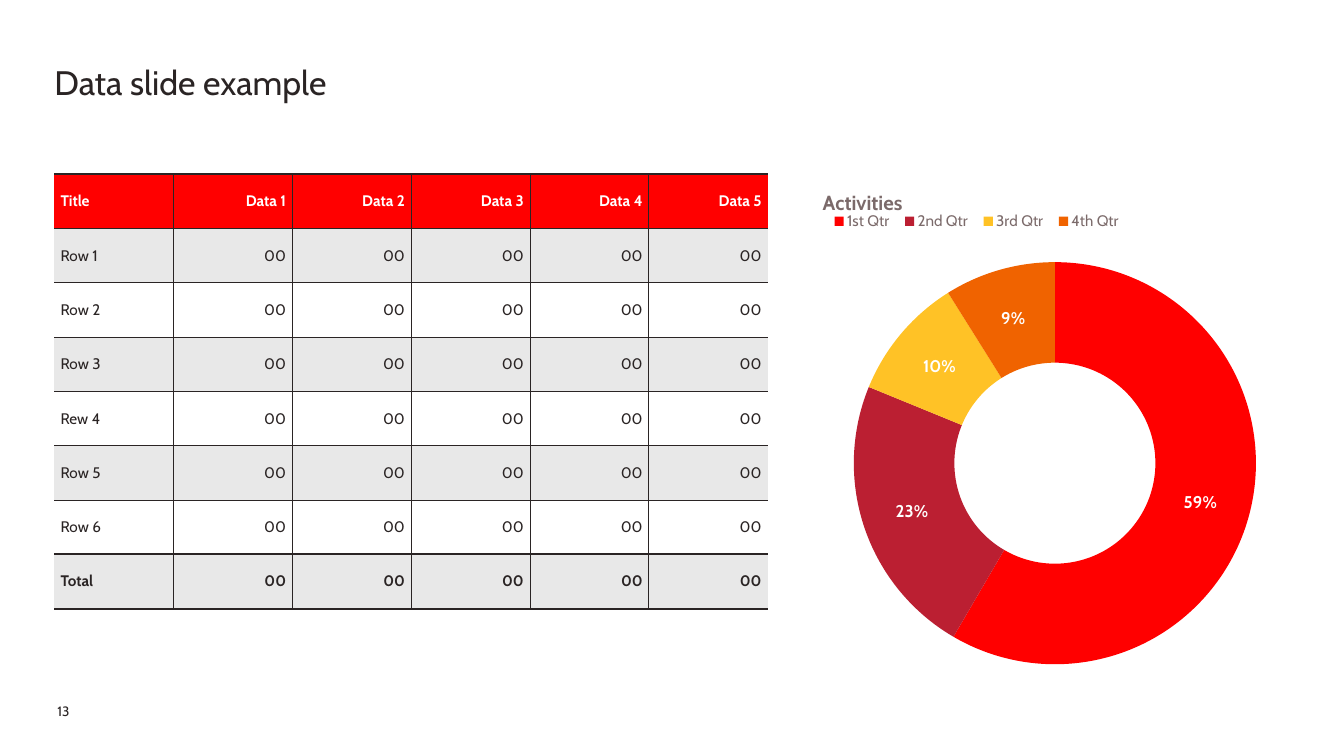
from lxml.etree import SubElement
from pptx import Presentation
from pptx.chart.data import CategoryChartData
from pptx.dml.color import RGBColor
from pptx.enum.chart import XL_CHART_TYPE, XL_LEGEND_POSITION
from pptx.enum.text import MSO_ANCHOR, MSO_AUTO_SIZE, PP_ALIGN
from pptx.oxml.ns import qn
from pptx.util import Pt

PX = 9144  # 100 px to the inch
INK, GREY, RED, WHITE, BAND = "2A2424", "7B6A6A", "FF0000", "FFFFFF", "E8E8E8"


def px(n):
    return n * PX


def tint(code):
    return RGBColor.from_string(code)


class Deck:
    font = "Cabin"

    def __init__(self, wide, high):
        self.prs = Presentation()
        self.prs.slide_width, self.prs.slide_height = px(wide), px(high)
        self.slide = self.prs.slides.add_slide(self.prs.slide_layouts[5])

    def style(self, font, size, color, bold=False):
        font.name, font.size, font.bold = self.font, Pt(size), bold
        font.color.rgb = tint(color)

    def label(self, shape, text, size, anchor):
        frame = shape.text_frame
        frame.text = text
        frame.word_wrap = True
        frame.auto_size = MSO_AUTO_SIZE.NONE
        frame.vertical_anchor = anchor
        frame.margin_left = frame.margin_top = 0
        frame.margin_right = frame.margin_bottom = 0
        frame.paragraphs[0].alignment = PP_ALIGN.LEFT
        self.style(frame.paragraphs[0].runs[0].font, size, INK)

    def title(self, text, box):
        shape = self.slide.shapes.title
        shape.left, shape.top, shape.width, shape.height = map(px, box)
        self.label(shape, text, 40, MSO_ANCHOR.MIDDLE)

    def text(self, text, size, box):
        shape = self.slide.shapes.add_textbox(*map(px, box))
        self.label(shape, text, size, MSO_ANCHOR.TOP)

    def edge(self, cell, side, width):
        props = cell._tc.get_or_add_tcPr()
        line = SubElement(props, qn(f"a:ln{side}"), w=str(Pt(width)))
        if width:
            fill = SubElement(line, qn("a:solidFill"))
            SubElement(fill, qn("a:srgbClr"), val=INK)
        else:
            SubElement(line, qn("a:noFill"))

    def cell(self, cell, text, fill, color, bold, right, edges):
        for side, width in edges.items():
            self.edge(cell, side, width)
        cell.fill.solid()
        cell.fill.fore_color.rgb = tint(fill)
        cell.vertical_anchor = MSO_ANCHOR.MIDDLE
        cell.text = text
        para = cell.text_frame.paragraphs[0]
        para.alignment = PP_ALIGN.RIGHT if right else PP_ALIGN.LEFT
        self.style(para.runs[0].font, 18, color, bold)

    def table(self, rows, box):
        last, end = len(rows) - 1, len(rows[0]) - 1
        grid = self.slide.shapes.add_table(last + 1, end + 1, *map(px, box)).table
        # Rule widths from the top of the table to its foot
        rules = [2] + [1] * (last - 1) + [3, 3]
        for r, row in enumerate(rows):
            fill = RED if r == 0 else BAND if r % 2 else WHITE
            for c, text in enumerate(row):
                edges = {"L": int(c > 0), "R": int(c < end),
                         "T": rules[r], "B": rules[r + 1]}
                self.cell(grid.cell(r, c), text, fill, INK if r else WHITE,
                          r in (0, last), c > 0, edges)

    def place(self, node, index, frame, **spots):
        for old in node.findall(qn("c:layout")):
            node.remove(old)
        layout = SubElement(node, qn("c:layout"))
        node.insert(index, layout)
        manual = SubElement(layout, qn("c:manualLayout"))
        if node.tag == qn("c:plotArea"):
            SubElement(manual, qn("c:layoutTarget"), val="inner")
        for key in "xy":
            SubElement(manual, qn(f"c:{key}Mode"), val="edge")
        for key, spot in spots.items():
            whole = frame[2] if key in "xw" else frame[3]
            SubElement(manual, qn(f"c:{key}"), val=str(spot / whole))

    def ring(self, name, parts, box):
        data = CategoryChartData()
        data.categories = [label for label, _, _ in parts]
        data.add_series(name, [value for _, value, _ in parts])
        chart = self.slide.shapes.add_chart(
            XL_CHART_TYPE.DOUGHNUT, *map(px, box), data).chart
        self.style(chart.font, 10, INK)

        # Heading and legend
        chart.has_title = True
        head = chart.chart_title.text_frame
        head.text = name
        self.style(head.paragraphs[0].runs[0].font, 24, GREY, True)
        chart.has_legend = True
        chart.legend.position = XL_LEGEND_POSITION.TOP
        chart.legend.include_in_layout = False
        self.style(chart.legend.font, 18, GREY)

        # Slices and labels
        plot = chart.plots[0]
        plot.vary_by_categories = True
        plot.has_data_labels = False
        series = plot.series[0]
        for i, (_, _, color) in enumerate(parts):
            form = series.points[i].format
            form.fill.solid()
            form.fill.fore_color.rgb = tint(color)
            form.line.fill.background()
        labels = series.data_labels
        labels.show_value = True
        labels.number_format = '0"%"'
        labels.number_format_is_linked = False
        self.style(labels.font, 20, WHITE, True)

        # Spots inside the chart frame, in px
        root = chart.element
        self.place(root.find(".//" + qn("c:title")), 1, box, x=12, y=17)
        self.place(root.find(".//" + qn("c:legend")), 1, box,
                   x=20, y=56, w=500, h=42)
        self.place(root.find(".//" + qn("c:plotArea")), 0, box,
                   x=68, y=144, w=660, h=658)


def main():
    deck = Deck(2199, 1237)

    # Table
    heads = ["Title"] + [f"Data {n}" for n in range(1, 6)]
    names = ["Row 1", "Row 2", "Row 3", "Rew 4", "Row 5", "Row 6", "Total"]
    rows = [heads] + [[name] + ["00"] * 5 for name in names]
    deck.table(rows, (89, 285, 1167, 711))

    # Ring chart
    parts = [("1st Qtr", 59, RED), ("2nd Qtr", 23, "BB1F32"),
             ("3rd Qtr", 10, "FFC226"), ("4th Qtr", 9, "F06300")]
    deck.ring("Activities", parts, (1328, 285, 794, 816))

    # Page number and title
    deck.text("13", 16, (94, 1150, 506, 30))
    deck.title("Data slide example", (89, 101, 1101, 67))

    deck.prs.save("out.pptx")


if __name__ == "__main__":
    main()
